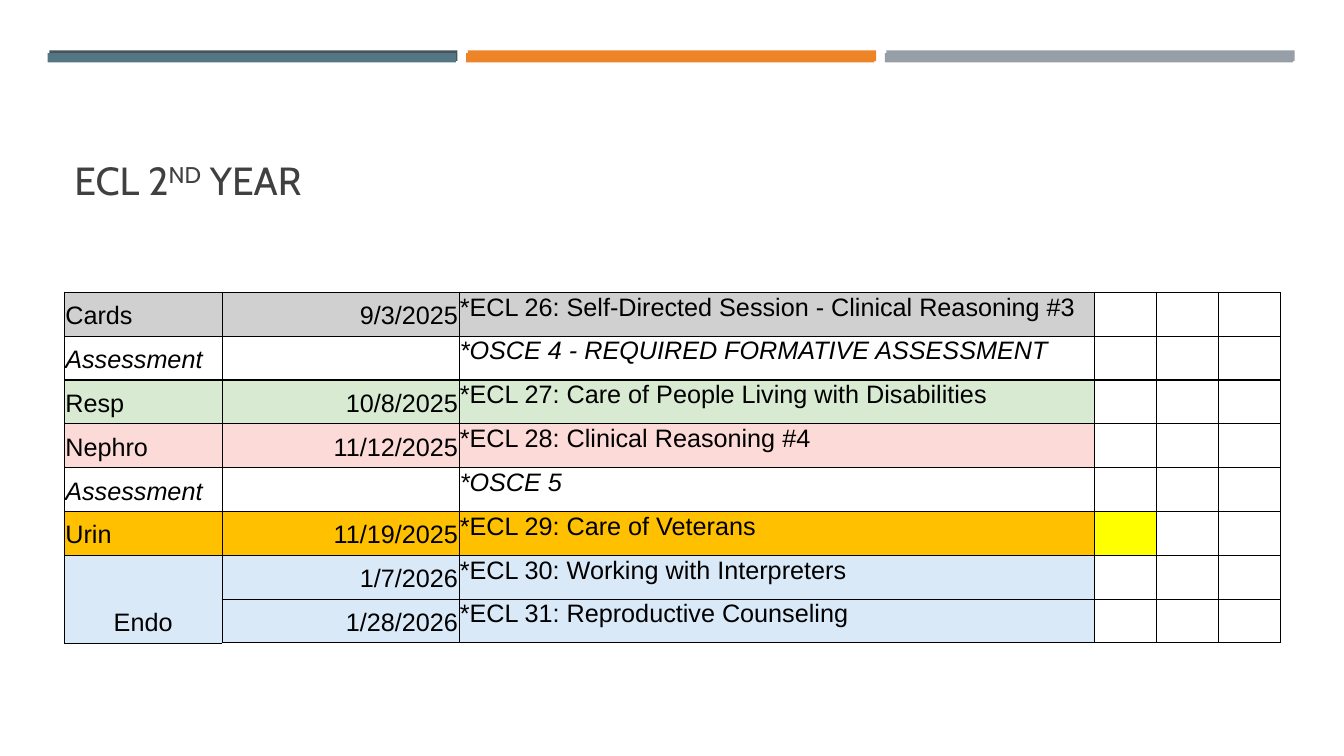
import pptx
import pptx.dml.color
import pptx.enum.shapes
import pptx.enum.text
import pptx.oxml
import pptx.oxml.ns
import pptx.util

Pt = pptx.util.Pt
RGBColor = pptx.dml.color.RGBColor
ALIGN = pptx.enum.text.PP_ALIGN
ANCHOR = pptx.enum.text.MSO_ANCHOR

BLACK = RGBColor(0x00, 0x00, 0x00)
TITLE_GRAY = RGBColor(0x40, 0x40, 0x40)
SLATE = RGBColor(0x46, 0x53, 0x59)
TEAL = RGBColor(0x53, 0x76, 0x85)
ORANGE = RGBColor(0xED, 0x84, 0x28)
SILVER = RGBColor(0x96, 0x9F, 0xA7)
WHITE = RGBColor(0xFF, 0xFF, 0xFF)
CARDS_GRAY = RGBColor(0xD0, 0xD0, 0xD0)
RESP_GREEN = RGBColor(0xD9, 0xEA, 0xD3)
NEPHRO_PINK = RGBColor(0xFB, 0xDA, 0xD7)
URIN_GOLD = RGBColor(0xFF, 0xC0, 0x00)
ENDO_BLUE = RGBColor(0xDA, 0xE9, 0xF8)
YELLOW = RGBColor(0xFF, 0xFF, 0x00)

# Block, date, session, row colour
SESSIONS = [
    ("Cards", "9/3/2025", "*ECL 26: Self-Directed Session - Clinical Reasoning #3", CARDS_GRAY),
    ("Assessment", "", "*OSCE 4 - REQUIRED FORMATIVE ASSESSMENT", WHITE),
    ("Resp", "10/8/2025", "*ECL 27: Care of People Living with Disabilities", RESP_GREEN),
    ("Nephro", "11/12/2025", "*ECL 28: Clinical Reasoning #4", NEPHRO_PINK),
    ("Assessment", "", "*OSCE 5", WHITE),
    ("Urin", "11/19/2025", "*ECL 29: Care of Veterans", URIN_GOLD),
    ("Endo", "1/7/2026", "*ECL 30: Working with Interpreters", ENDO_BLUE),
    ("", "1/28/2026", "*ECL 31: Reproductive Counseling", ENDO_BLUE),
]
COLUMN_WIDTHS = [112.5, 169.3, 453.6, 44.3, 44.3, 44.3]
ROW_HEIGHT = 31.32
# Line widths from the top edge of the table to its bottom edge
RULES = [1, 1, 1, 0.5, 1, 1, 0.5, 0.5, 1]
URIN_ROW, ENDO_ROW = 5, 6
BLOCK, DATE, SESSION, FIRST_EMPTY = range(4)


def add_bars(slide, left, top, height, colors):
    for index, color in enumerate(colors):
        bar = slide.shapes.add_shape(
            pptx.enum.shapes.MSO_SHAPE.RECTANGLE,
            Pt(left + index * 299), Pt(top), Pt(291.6), Pt(height))
        bar.shadow.inherit = False
        bar.fill.solid()
        bar.fill.fore_color.rgb = color
        bar.line.fill.background()


def add_run(paragraph, text, font, size, color, italic=False):
    run = paragraph.add_run()
    run.text = text
    run.font.name = font
    run.font.size = Pt(size)
    run.font.color.rgb = color
    run.font.italic = italic
    return run


def add_title(slide):
    title = slide.shapes.add_textbox(Pt(46), Pt(55.5), Pt(868.3), Pt(93.6))
    frame = title.text_frame
    frame.word_wrap = True
    frame.vertical_anchor = ANCHOR.BOTTOM
    paragraph = frame.paragraphs[0]
    paragraph.line_spacing = 0.9
    add_run(paragraph, "ECL 2", "Cabin", 28, TITLE_GRAY)
    ordinal = add_run(paragraph, "ND", "Cabin", 28, TITLE_GRAY)
    ordinal.font._element.set("baseline", "30000")
    add_run(paragraph, " YEAR", "Cabin", 28, TITLE_GRAY)


def set_borders(cell, left, right, top, bottom):
    """Draw black cell edges; widths are in points."""
    properties = cell._tc.get_or_add_tcPr()
    edges = [("L", left), ("R", right), ("T", top), ("B", bottom)]
    for position, (side, width) in enumerate(edges):
        line = pptx.oxml.parse_xml(
            f'<a:ln{side} {pptx.oxml.ns.nsdecls("a")} w="{Pt(width)}">'
            f'<a:solidFill><a:srgbClr val="{BLACK}"/></a:solidFill></a:ln{side}>')
        properties.insert(position, line)


def fill_cell(cell, color):
    cell.fill.solid()
    cell.fill.fore_color.rgb = color


def write_cell(cell, text, align, anchor, italic):
    cell.margin_left = cell.margin_right = cell.margin_top = Pt(0.7)
    cell.margin_bottom = Pt(4.3)
    cell.vertical_anchor = anchor
    paragraph = cell.text_frame.paragraphs[0]
    paragraph.alignment = align
    if text:
        add_run(paragraph, text, "Arial", 18, BLACK, italic)


def add_schedule(slide):
    table = slide.shapes.add_table(
        len(SESSIONS), len(COLUMN_WIDTHS), Pt(46), Pt(208.8),
        Pt(sum(COLUMN_WIDTHS)), Pt(ROW_HEIGHT * len(SESSIONS))).table
    table.first_row = table.horz_banding = False
    for column, width in zip(table.columns, COLUMN_WIDTHS):
        column.width = Pt(width)
    for row_index, (block, date, session, color) in enumerate(SESSIONS):
        table.rows[row_index].height = Pt(ROW_HEIGHT)
        cells = [table.cell(row_index, index) for index in range(len(COLUMN_WIDTHS))]
        italic = block == "Assessment"
        block_align = ALIGN.CENTER if block == "Endo" else ALIGN.LEFT
        write_cell(cells[BLOCK], block, block_align, ANCHOR.BOTTOM, italic)
        write_cell(cells[DATE], date, ALIGN.RIGHT, ANCHOR.BOTTOM, italic)
        write_cell(cells[SESSION], session, ALIGN.LEFT, ANCHOR.TOP, italic)
        for index, cell in enumerate(cells):
            fill_cell(cell, color if index < FIRST_EMPTY else WHITE)
            set_borders(cell, 1 if index == BLOCK else 0.5, 0.5,
                        RULES[row_index], RULES[row_index + 1])
    fill_cell(table.cell(URIN_ROW, FIRST_EMPTY), YELLOW)
    table.cell(ENDO_ROW, BLOCK).merge(table.cell(ENDO_ROW + 1, BLOCK))


def main():
    deck = pptx.Presentation()
    deck.slide_width, deck.slide_height = Pt(960), Pt(540)
    slide = deck.slides.add_slide(deck.slide_layouts[6])
    add_bars(slide, 35.2, 36, 7.5, [SLATE, ORANGE, SILVER])
    add_bars(slide, 34, 38, 6.5, [TEAL, ORANGE, SILVER])
    add_title(slide)
    add_schedule(slide)
    deck.save("out.pptx")


if __name__ == "__main__":
    main()
